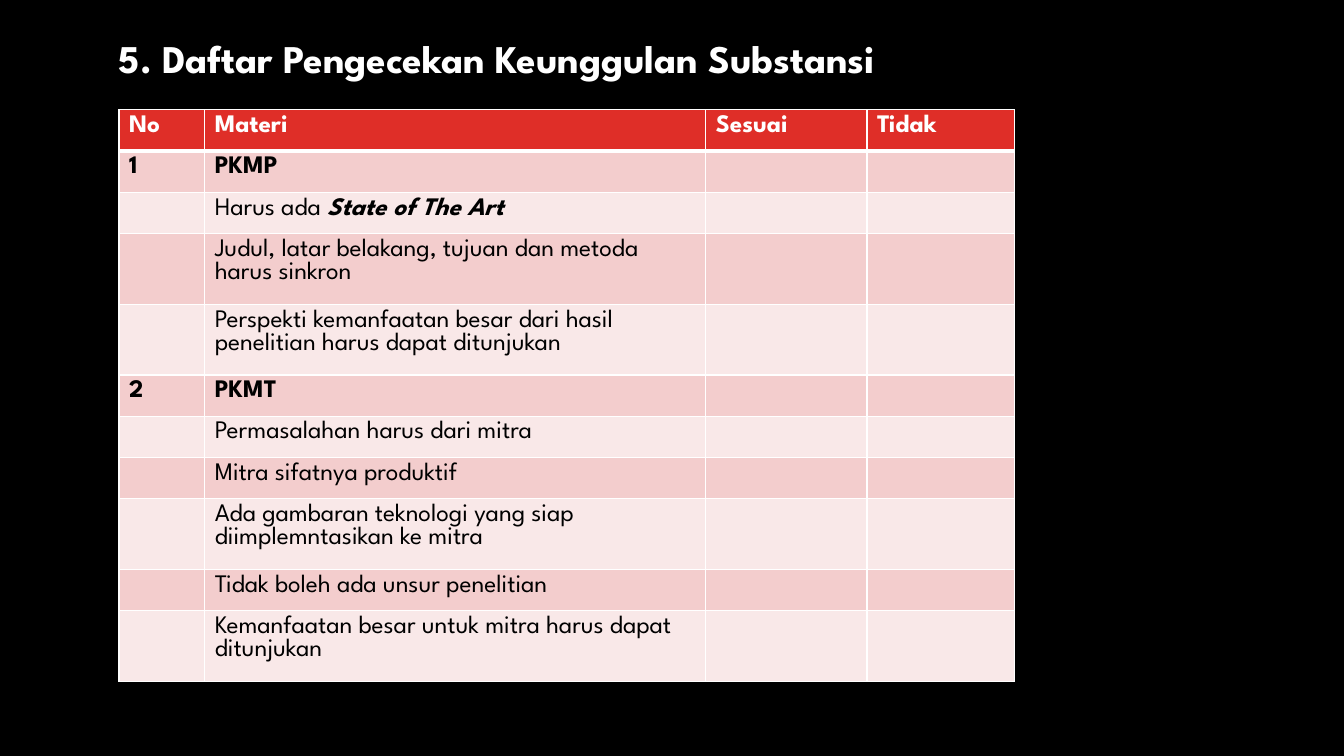
from lxml import etree
from pptx import Presentation
from pptx.dml.color import RGBColor
from pptx.enum.text import MSO_ANCHOR, PP_ALIGN
from pptx.oxml.ns import qn
from pptx.util import Inches, Pt

LEFT = PP_ALIGN.LEFT
MIDDLE = MSO_ANCHOR.MIDDLE
TITLE_ONLY = 5
FONT = "League Spartan"
COLORS = {
    "background": "000000",
    "white": "FFFFFF",
    "text": "000000",
    "header": "DF2E28",
    "dark_band": "F3CDCD",
    "light_band": "F9E8E8",
}
COLUMN_WIDTHS = [0.85, 4.97, 1.6, 1.46]
SINGLE_ROW = 0.41
DOUBLE_ROW = 0.7
HEADINGS = ["No", "Materi", "Sesuai", "Tidak"]
SECTIONS = [
    ("PKMP", [
        ("Harus ada ", "State of The Art"),
        "Judul, latar belakang, tujuan dan metoda harus sinkron",
        "Perspekti kemanfaatan besar dari hasil penelitian harus dapat ditunjukan",
    ]),
    ("PKMT", [
        "Permasalahan harus dari mitra",
        "Mitra sifatnya produktif",
        "Ada gambaran teknologi yang siap diimplemntasikan ke mitra",
        "Tidak boleh ada unsur penelitian",
        "Kemanfaatan besar untuk mitra harus dapat ditunjukan",
    ]),
]
TWO_LINE_LENGTH = 45


def color(name):
    return RGBColor.from_string(COLORS[name])


def add_text(paragraph, text, size=18, color_name="text", bold=False, italic=False):
    run = paragraph.add_run()
    run.text = text
    run.font.name = FONT
    run.font.size = Pt(size)
    run.font.bold = bold
    run.font.italic = italic
    run.font.color.rgb = color(color_name)


def add_title(slide, left, top, width, height):
    title = slide.shapes.title
    title.left, title.top = Inches(left), Inches(top)
    title.width, title.height = Inches(width), Inches(height)
    frame = title.text_frame
    frame.word_wrap = False
    frame.vertical_anchor = MIDDLE
    paragraph = frame.paragraphs[0]
    paragraph.alignment = LEFT
    add_text(paragraph, "5. Daftar Pengecekan Keunggulan Substansi",
             size=28, color_name="white", bold=True)


def set_borders(cell, top=1, bottom=1):
    properties = cell._tc.get_or_add_tcPr()
    for side, points in (("L", 1), ("R", 1), ("T", top), ("B", bottom)):
        line = etree.SubElement(properties, qn(f"a:ln{side}"), w=str(Pt(points)))
        fill = etree.SubElement(line, qn("a:solidFill"))
        etree.SubElement(fill, qn("a:srgbClr"), val=COLORS["white"])


def checklist_rows():
    rows = [(HEADINGS, True)]
    for number, (name, items) in enumerate(SECTIONS, 1):
        rows.append(([str(number), name, "", ""], True))
        rows.extend((["", item, "", ""], False) for item in items)
    return rows


def fill_cell(cell, content, row_index, bold):
    header = row_index == 0
    set_borders(cell, top=3 if row_index == 1 else 1, bottom=3 if header else 1)
    band = "dark_band" if row_index % 2 else "light_band"
    cell.fill.solid()
    cell.fill.fore_color.rgb = color("header" if header else band)
    paragraph = cell.text_frame.paragraphs[0]
    paragraph.font.size = Pt(18)
    text_color = "white" if header else "text"
    if isinstance(content, tuple):
        plain, emphasis = content
        add_text(paragraph, plain, color_name=text_color)
        add_text(paragraph, emphasis, color_name=text_color, bold=True, italic=True)
    elif content:
        add_text(paragraph, content, color_name=text_color, bold=bold)


def add_checklist(slide, left, top, width, height):
    rows = checklist_rows()
    table = slide.shapes.add_table(
        len(rows), len(COLUMN_WIDTHS),
        Inches(left), Inches(top), Inches(width), Inches(height)).table
    for column, column_width in zip(table.columns, COLUMN_WIDTHS):
        column.width = Inches(column_width)
    for row_index, (contents, bold) in enumerate(rows):
        two_lines = len("".join(contents[1])) > TWO_LINE_LENGTH
        table.rows[row_index].height = Inches(DOUBLE_ROW if two_lines else SINGLE_ROW)
        for column_index, content in enumerate(contents):
            fill_cell(table.cell(row_index, column_index), content, row_index, bold)


def main():
    presentation = Presentation()
    presentation.slide_width = Inches(13.33)
    presentation.slide_height = Inches(7.5)
    slide = presentation.slides.add_slide(presentation.slide_layouts[TITLE_ONLY])
    slide.background.fill.solid()
    slide.background.fill.fore_color.rgb = color("background")
    add_title(slide, 1.08, 0.29, 8.62, 0.57)
    add_checklist(slide, 1.18, 1.09, 8.88, 5.64)
    presentation.save("out.pptx")


if __name__ == "__main__":
    main()
